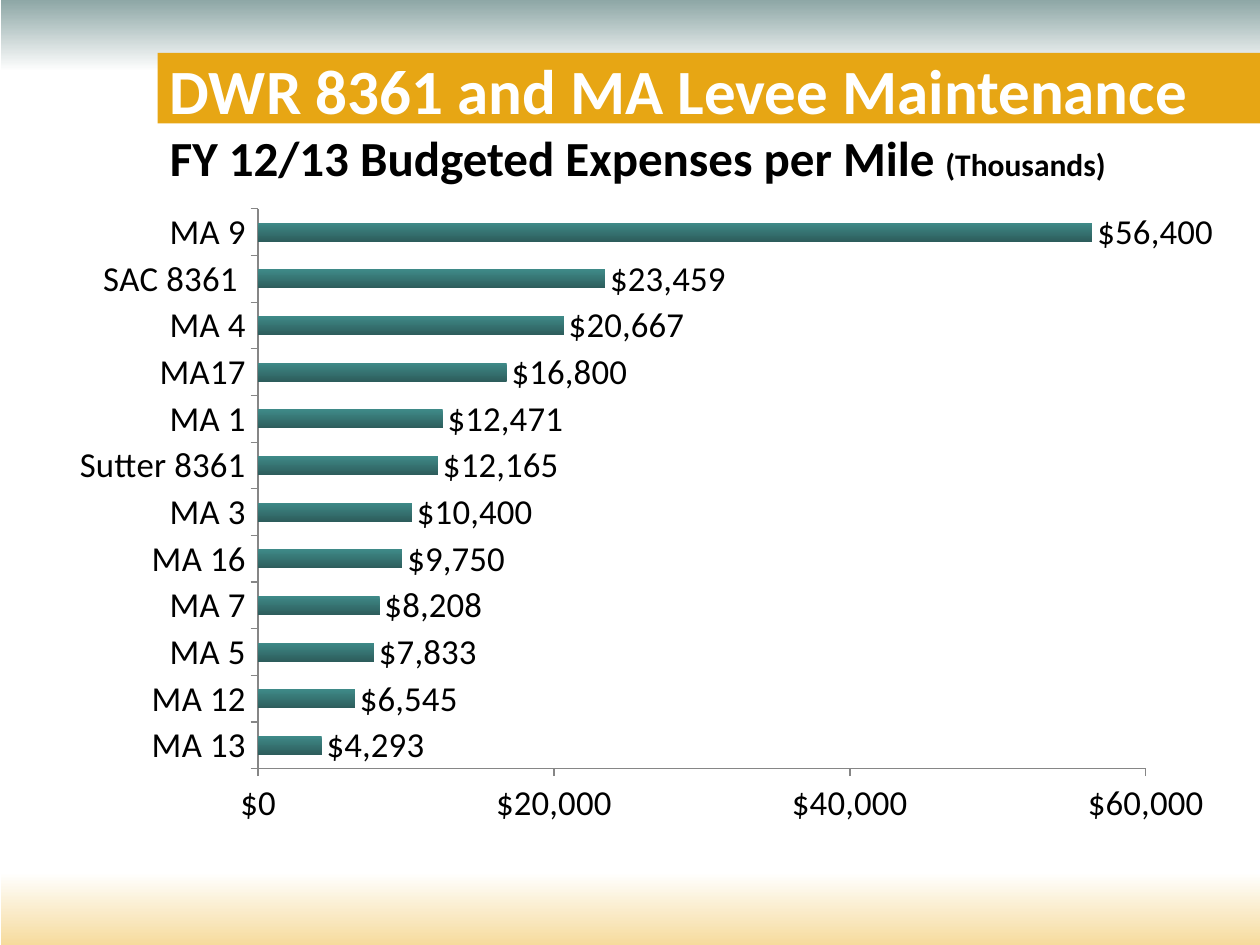
"""Build the levee maintenance budget slide with its bar chart."""
from lxml.etree import SubElement
from pptx import Presentation
from pptx.chart.data import CategoryChartData
from pptx.dml.color import RGBColor
from pptx.enum.chart import XL_CHART_TYPE as ChartType, XL_LABEL_POSITION as LabelPosition
from pptx.enum.chart import XL_TICK_MARK as TickMark
from pptx.enum.shapes import MSO_SHAPE as Shape
from pptx.enum.text import MSO_ANCHOR as Anchor
from pptx.oxml import parse_xml
from pptx.oxml.ns import nsdecls, qn
from pptx.util import Inches, Pt

COLORS = {
    "teal": "8EA7A6", "gold": "E7A614", "sand": "F6DB9D", "white": "FFFFFF",
    "black": "000000", "bar_top": "3F8A88", "bar_bottom": "2D5D5C", "axis": "868686",
}
FONT = "Calibri"
MONEY = '"$"#,##0'
EXPENSES = {
    "MA 13": 4293, "MA 12": 6545, "MA 5": 7833, "MA 7": 8208,
    "MA 16": 9750, "MA 3": 10400, "Sutter 8361": 12165, "MA 1": 12471,
    "MA17": 16800, "MA 4": 20667, "SAC 8361 ": 23459, "MA 9": 56400,
}


def rgb(name):
    return RGBColor.from_string(COLORS[name])


def fill_gradient(fill, first, last, end, angle):
    fill.gradient()
    fill.gradient_angle = angle
    for stop, name, position in zip(fill.gradient_stops, (first, last), (0, end)):
        stop.color.rgb = rgb(name)
        stop.position = position


deck = Presentation()
deck.slide_width, deck.slide_height = Inches(10), Inches(7.5)
page = deck.slides.add_slide(deck.slide_layouts[6])

for left, top, width, height, color, angle in [
    (0.01, 0, 9.99, 1.09, "teal", 270),
    (1.25, 0.42, 8.75, 0.56, "gold", None),
    (0.01, 6.39, 9.99, 1.11, "sand", 90),
]:
    band = page.shapes.add_shape(
        Shape.RECTANGLE, Inches(left), Inches(top), Inches(width), Inches(height))
    band.shadow.inherit = False
    band.line.fill.background()
    if angle is None:
        band.fill.solid()
        band.fill.fore_color.rgb = rgb(color)
    else:
        fill_gradient(band.fill, color, "white", 0.52, angle)

title = page.shapes.add_textbox(Inches(1.25), Inches(0.47), Inches(8.75), Inches(0.95))
title.text_frame.word_wrap = True
title.text_frame.vertical_anchor = Anchor.MIDDLE
para = title.text_frame.paragraphs[0]
for text, size, color in [
    ("DWR 8361 and MA Levee Maintenance", 36, "white"),
    ("FY 12/13 Budgeted Expenses per Mile ", 28, "black"),
    ("(Thousands)", 18, "black"),
]:
    span = para.add_run()
    span.text = text
    span.font.name, span.font.size, span.font.bold = FONT, Pt(size), True
    span.font.color.rgb = rgb(color)
    if size == 36:
        para.add_line_break()

data = CategoryChartData(number_format=MONEY)
data.categories = list(EXPENSES)
data.add_series("Series 1", list(EXPENSES.values()))
chart = page.shapes.add_chart(
    ChartType.BAR_CLUSTERED, Inches(0.17), Inches(1.17), Inches(9.46), Inches(5.42), data).chart
chart.has_legend = False
chart.has_title = False
chart.font.name, chart.font.size = FONT, Pt(20)
chart.font.color.rgb = rgb("black")

for axis in (chart.category_axis, chart.value_axis):
    axis.has_major_gridlines = False
    axis.major_tick_mark = TickMark.OUTSIDE
    axis.minor_tick_mark = TickMark.NONE
    axis.format.line.color.rgb = rgb("axis")
    axis.tick_labels.font.size = Pt(20)
money_axis = chart.value_axis
money_axis.minimum_scale, money_axis.maximum_scale = 0, 60000
money_axis.major_unit = 20000
money_axis.tick_labels.number_format = MONEY
money_axis.tick_labels.number_format_is_linked = False

plot = chart.plots[0]
plot.gap_width = 150
plot.vary_by_categories = False
fill_gradient(plot.series[0].format.fill, "bar_top", "bar_bottom", 1, 270)
plot.has_data_labels = True
labels = plot.data_labels
labels.show_value = True
labels.position = LabelPosition.OUTSIDE_END
labels.number_format, labels.number_format_is_linked = MONEY, False
labels.font.size = Pt(20)

plot_area = chart.element.find(".//" + qn("c:plotArea"))
for old_layout in plot_area.findall(qn("c:layout")):
    plot_area.remove(old_layout)
layout = parse_xml(f"<c:layout {nsdecls('c')}><c:manualLayout/></c:layout>")
for tag, value in [
    ("layoutTarget", "inner"), ("xMode", "edge"), ("yMode", "edge"),
    ("x", "0.2"), ("y", "0.09"), ("w", "0.75"), ("h", "0.82"),
]:
    SubElement(layout[0], qn("c:" + tag)).set("val", value)
plot_area.insert(0, layout)

deck.save("out.pptx")
